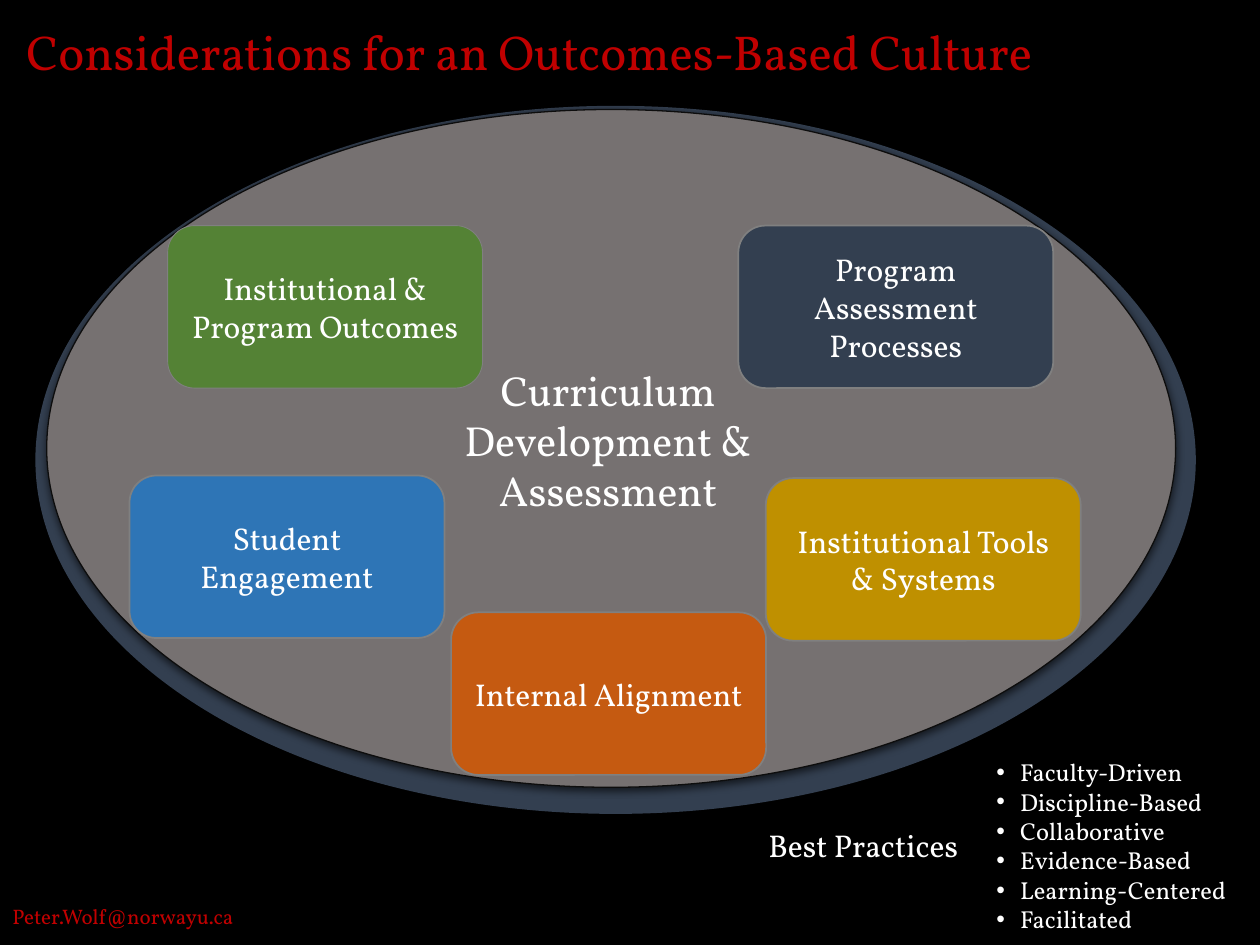
from lxml import etree
from pptx import Presentation
from pptx.dml.color import RGBColor
from pptx.enum import shapes as kinds, text as txt
from pptx.oxml import ns
from pptx.util import Pt

FONT, WHITE, RED, SLATE = "Vollkorn", "FFFFFF", "C00000", "333F50"
FACTOR_SIZE = (180, 92.9)
FACTORS = [
    ("Institutional & Program Outcomes", 95.8, 128.9, "548235", 0.5),
    ("Program Assessment Processes", 421.9, 128.9, SLATE, 1),
    ("Institutional Tools & Systems", 437.6, 273.2, "BF9000", 1),
    ("Internal Alignment", 257.8, 349.9, "C55A11", 1),
    ("Student Engagement", 74, 271.7, "2E75B6", 1),
]
PRACTICES = ["Faculty-Driven", "Discipline-Based", "Collaborative",
             "Evidence-Based", "Learning-Centered", "Facilitated"]


def colour(value):
    """Turn a hex string into a colour."""
    return RGBColor.from_string(value)


def points(box):
    """Turn a box of numbers into lengths."""
    return [Pt(length) for length in box]


def add_xml(parent, tag, **attributes):
    """Append a drawing element and return it."""
    return etree.SubElement(parent, ns.qn(tag), attributes)


def write(frame, lines, size, ink=WHITE, align=txt.PP_ALIGN.LEFT, **layout):
    """Fill a text frame, one paragraph a line."""
    for name, value in layout.items():
        setattr(frame, name, value)
    frame.text = "\n".join(lines)
    for paragraph in frame.paragraphs:
        paragraph.alignment = align
        font = paragraph.runs[0].font
        for name, value in {"name": FONT, "size": Pt(size)}.items():
            setattr(font, name, value)
        font.color.rgb = colour(ink)


def add_label(slide, box, lines, size, ink=WHITE, wrap=False, align=txt.PP_ALIGN.LEFT):
    """Place a text box and return its frame."""
    frame = slide.shapes.add_textbox(*points(box)).text_frame
    write(frame, lines, size, ink, align, word_wrap=wrap,
          auto_size=txt.MSO_AUTO_SIZE.SHAPE_TO_FIT_TEXT)
    return frame


def add_filled(slide, kind, box, fill, outline=None, width=0):
    """Place a flat shape with an optional outline."""
    shape = slide.shapes.add_shape(kind, *points(box))
    shape.shadow.inherit = False
    shape.fill.solid()
    shape.fill.fore_color.rgb = colour(fill)
    if outline:
        shape.line.color.rgb = colour(outline)
        shape.line.width = Pt(width)
    else:
        shape.line.fill.background()
    return shape


def add_title(slide, box):
    """Move and format the title placeholder."""
    title = slide.shapes.title
    for name, value in zip(("left", "top", "width", "height"), points(box)):
        setattr(title, name, value)
    write(title.text_frame, ["Considerations for an Outcomes-Based Culture"], 28, RED,
          word_wrap=False, vertical_anchor=txt.MSO_ANCHOR.TOP,
          auto_size=txt.MSO_AUTO_SIZE.SHAPE_TO_FIT_TEXT)


def add_culture(slide, box):
    """Draw the two ellipses and the central topic."""
    left, top, width, height = box
    oval = kinds.MSO_SHAPE.OVAL
    add_filled(slide, oval, box, SLATE)
    curriculum = add_filled(slide, oval, (left + 6.5, top + 2.1, width - 18, height - 17.3),
                            "767171", "0D0D0D", 0.75)
    effects = curriculum._element.spPr.find(ns.qn("a:effectLst"))
    shadow = add_xml(effects, "a:outerShdw", blurRad=str(Pt(4.5)), dist=str(Pt(1.5)),
                     dir="5400000", algn="ctr", rotWithShape="0")
    add_xml(add_xml(shadow, "a:srgbClr", val="000000"), "a:alpha", val="63000")
    add_label(slide, (left + 214.6, top + 144, 225.4, 94.3),
              ["Curriculum Development & Assessment"], 24,
              wrap=True, align=txt.PP_ALIGN.CENTER)


def add_factor(slide, box, label, fill, width):
    """Draw one rounded box with its label."""
    shape = add_filled(slide, kinds.MSO_SHAPE.ROUNDED_RECTANGLE, box, fill, "808080", width)
    write(shape.text_frame, [label], 18, align=txt.PP_ALIGN.CENTER, word_wrap=True,
          vertical_anchor=txt.MSO_ANCHOR.MIDDLE, margin_left=Pt(6.5), margin_right=Pt(6.5),
          margin_top=Pt(2.9), margin_bottom=Pt(2.9))


def add_practices(slide, box):
    """Place the best practices heading and its bullet list."""
    left, top, width, height = box
    add_label(slide, (left, top + 39.6, 123.8, 28.8), ["Best Practices"], 18)
    frame = add_label(slide, (left + 130.3, top, width - 130.3, height),
                      PRACTICES, 14, wrap=True)
    for paragraph in frame.paragraphs:
        properties = paragraph._p.get_or_add_pPr()
        for name, value in {"marL": Pt(13.5), "indent": Pt(-13.5)}.items():
            properties.set(name, str(value))
        add_xml(properties, "a:buFont", typeface="Arial")
        add_xml(properties, "a:buChar", char="•")


def main():
    """Build the slide and save it."""
    deck = Presentation()
    deck.slide_width, deck.slide_height = Pt(720), Pt(540)
    slide = deck.slides.add_slide(deck.slide_layouts[5])
    slide.background.fill.solid()
    slide.background.fill.fore_color.rgb = colour("000000")
    add_title(slide, (7.9, 8.6, 605.5, 41))
    add_culture(slide, (20.2, 60.5, 663.1, 404.6))
    for label, left, top, fill, width in FACTORS:
        add_factor(slide, (left, top, *FACTOR_SIZE), label, fill, width)
    add_practices(slide, (432, 429.1, 280.8, 108.7))
    add_label(slide, (0, 512.6, 160, 21.6), ["Peter.Wolf@norwayu.ca"], 12, RED, wrap=True)
    deck.save("out.pptx")


if __name__ == "__main__":
    main()
